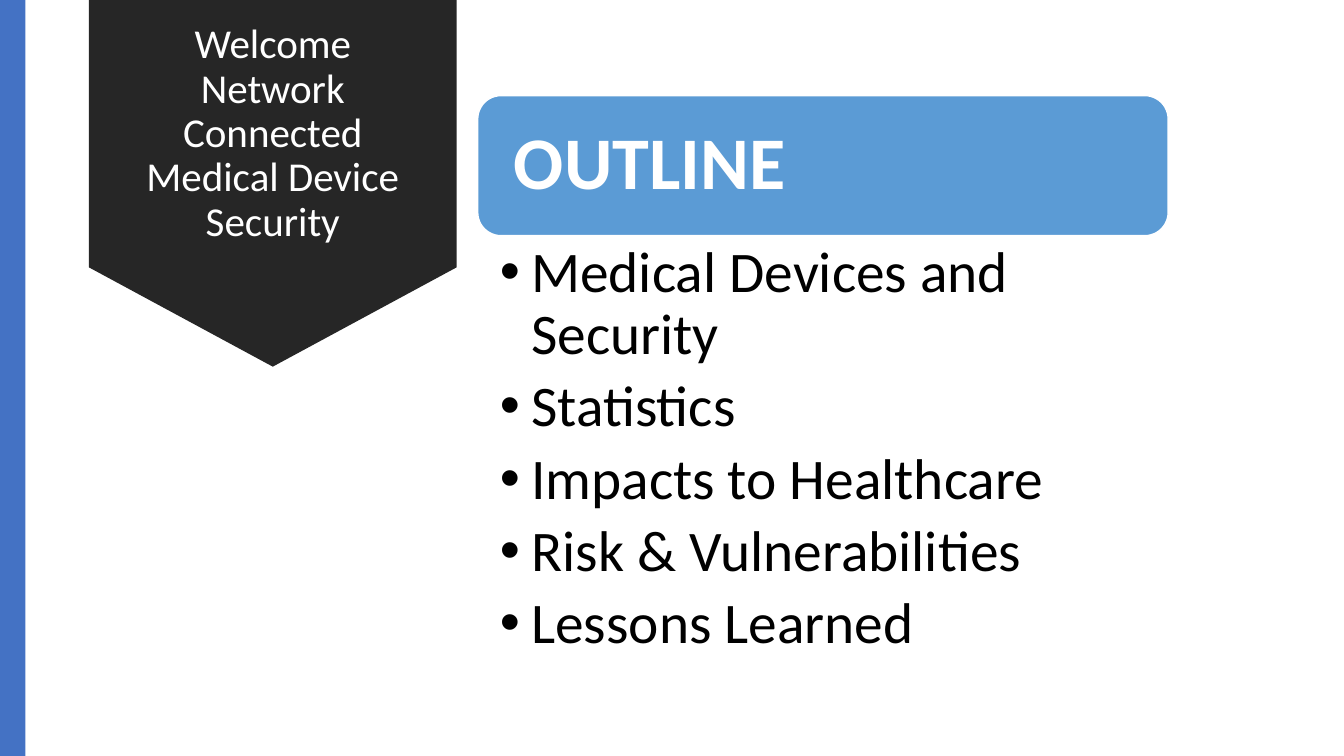
"""Build the outline slide for a talk on medical device security."""
from pptx import Presentation
from pptx.dml.color import RGBColor
from pptx.enum.shapes import MSO_SHAPE as Preset
from pptx.enum.text import MSO_ANCHOR as Anchor, MSO_AUTO_SIZE as AutoSize, PP_ALIGN as Align
from pptx.oxml import parse_xml
from pptx.oxml.ns import nsdecls
from pptx.util import Cm, Pt

TITLE = "Welcome Network Connected Medical Device Security"
HEADING = "OUTLINE"
TOPICS = [
    "Medical Devices and Security",
    "Statistics",
    "Impacts to Healthcare",
    "Risk & Vulnerabilities",
    "Lessons Learned",
]
COLORS = {"bar": "4472C4", "arrow": "262626", "heading": "5B9BD5",
          "light": "FFFFFF", "dark": "000000"}

SLIDE_W, SLIDE_H = 33.87, 19.05
ARROW_LEFT, ARROW_SIZE = 2.24, 9.27
TITLE_W = 8.03
OUTLINE_LEFT, OUTLINE_TOP, OUTLINE_W = 12.04, 2.41, 17.4
HEADING_H, TOPICS_H = 3.53, 11.58
HANGING = 0.79


def color(name):
    return RGBColor.from_string(COLORS[name])


def add_block(slide, preset, box, fill):
    block = slide.shapes.add_shape(preset, *map(Cm, box))
    block.shadow.inherit = False
    block.fill.solid()
    block.fill.fore_color.rgb = color(fill)
    block.line.fill.background()
    return block


def write(shape, lines, *, size, ink, bold=False, align=Align.LEFT,
          anchor=Anchor.TOP, insets=(0.25, 0.13, 0.25, 0.13), after=0, bullet=False):
    frame = shape.text_frame
    frame.text = "\n".join(lines)
    frame.word_wrap = True
    frame.auto_size = AutoSize.NONE
    frame.vertical_anchor = anchor
    (frame.margin_left, frame.margin_top,
     frame.margin_right, frame.margin_bottom) = map(Cm, insets)
    for paragraph in frame.paragraphs:
        if bullet:
            props = paragraph._p.get_or_add_pPr()
            props.set("marL", str(Cm(HANGING)))
            props.set("indent", str(-Cm(HANGING)))
            props.append(parse_xml(f'<a:buChar {nsdecls("a")} char="•"/>'))
        paragraph.alignment = align
        paragraph.line_spacing = 0.9
        paragraph.space_before = Pt(0)
        paragraph.space_after = Pt(after)
        for run in paragraph.runs:
            run.font.name = "Calibri"
            run.font.size = Pt(size)
            run.font.bold = bold
            run.font.color.rgb = color(ink)


def place(shape, box):
    shape.left, shape.top, shape.width, shape.height = map(Cm, box)


def main():
    deck = Presentation()
    deck.slide_width, deck.slide_height = Cm(SLIDE_W), Cm(SLIDE_H)
    slide = deck.slides.add_slide(deck.slide_layouts[1])
    title, topics = slide.placeholders

    bar = add_block(slide, Preset.RECTANGLE, (0, 0, 0.64, SLIDE_H), "bar")
    arrow = add_block(slide, Preset.DOWN_ARROW,
                      (ARROW_LEFT, -0.03, ARROW_SIZE, ARROW_SIZE), "arrow")
    arrow.adjustments[0], arrow.adjustments[1] = 1, 0.27
    for backdrop in (arrow, bar):
        slide.shapes._spTree.insert(2, backdrop._element)

    place(title, (ARROW_LEFT + (ARROW_SIZE - TITLE_W) / 2, 0.46, TITLE_W, 8.2))
    write(title, [TITLE], size=29.3, ink="light", align=Align.CENTER)

    heading = add_block(slide, Preset.ROUNDED_RECTANGLE,
                        (OUTLINE_LEFT, OUTLINE_TOP, OUTLINE_W, HEADING_H), "heading")
    heading.line.color.rgb = color("light")
    heading.line.width = Pt(1)
    write(heading, [HEADING], size=53, ink="light", bold=True,
          anchor=Anchor.MIDDLE, insets=(0.74, 0.74, 0.74, 0.74))

    place(topics, (OUTLINE_LEFT, OUTLINE_TOP + HEADING_H, OUTLINE_W, TOPICS_H))
    write(topics, TOPICS, size=41, ink="dark", insets=(0.56, 0.18, 1.04, 0.18),
          after=7.4, bullet=True)

    deck.save("out.pptx")


if __name__ == "__main__":
    main()
